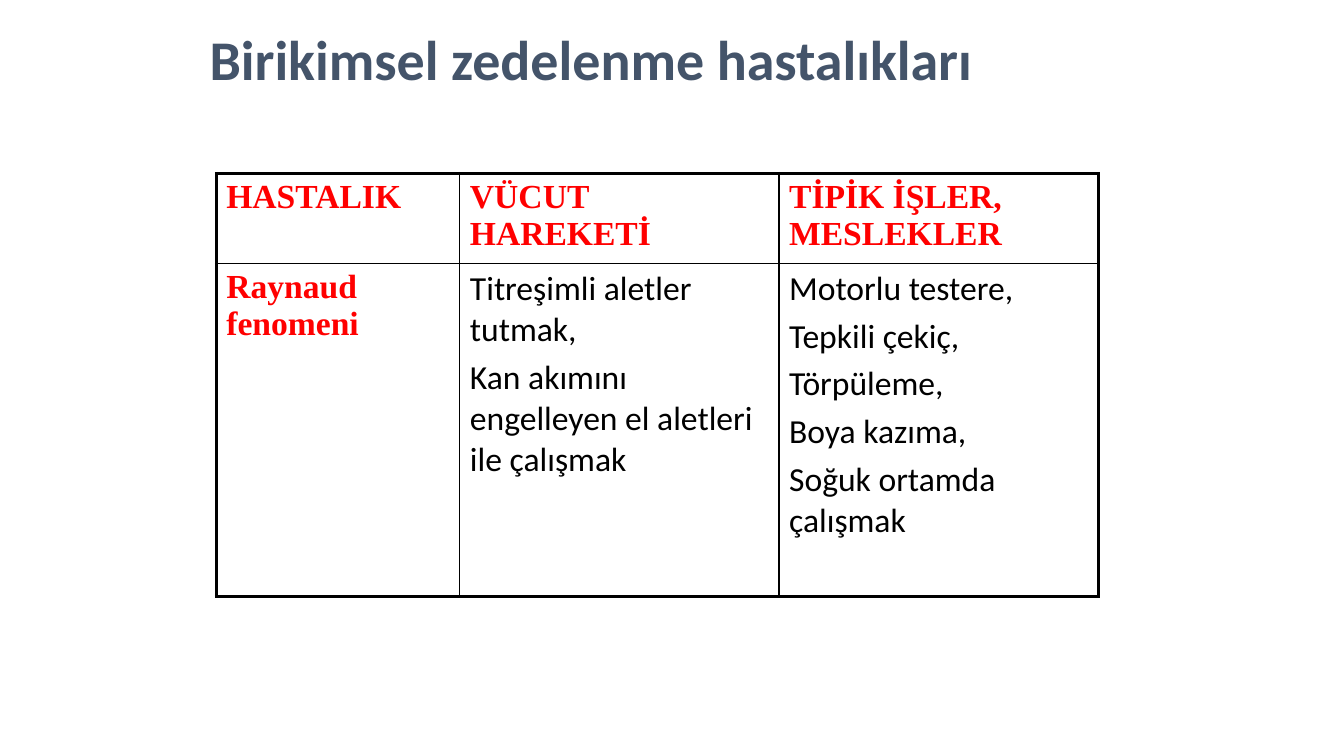
"""Build a slide with a table on a cumulative trauma disorder."""
from lxml.etree import SubElement
from pptx import Presentation
from pptx.dml.color import RGBColor
from pptx.enum.text import MSO_ANCHOR, PP_ALIGN
from pptx.oxml.ns import qn
from pptx.util import Pt

PX = 9525
THIN, THICK = 1, 2.25
BLACK, RED, SLATE = "000000", "FF0000", "44546A"


def write(frame, text, size=24, font="Calibri", color=BLACK, bold=False, line=1.0, gap=4.8):
    frame.word_wrap = True
    for index, content in enumerate(text.split("\n")):
        paragraph = frame.paragraphs[0] if index == 0 else frame.add_paragraph()
        paragraph.alignment = PP_ALIGN.LEFT
        paragraph.line_spacing = line
        paragraph.space_before = Pt(gap if index else 0)
        run = paragraph.add_run()
        run.text = content
        run.font.size = Pt(size)
        run.font.name = font
        run.font.bold = bold
        run.font.color.rgb = RGBColor.from_string(color)


def add_border(cell, side, width):
    border = SubElement(cell._tc.get_or_add_tcPr(), qn(f"a:ln{side}"), w=str(Pt(width)))
    fill = SubElement(border, qn("a:solidFill"))
    SubElement(fill, qn("a:srgbClr"), val=BLACK)


presentation = Presentation()
presentation.slide_width = 1280 * PX
presentation.slide_height = 720 * PX
slide = presentation.slides.add_slide(presentation.slide_layouts[5])

heading = slide.shapes.title
heading.left, heading.top, heading.width, heading.height = (n * PX for n in (190, 22, 893, 75))
heading.text_frame.vertical_anchor = MSO_ANCHOR.MIDDLE
write(heading.text_frame, "Birikimsel zedelenme hastalıkları", size=40, color=SLATE, bold=True, line=0.9)

disease_rows = [
    ["HASTALIK", "VÜCUT HAREKETİ", "TİPİK İŞLER, MESLEKLER"],
    [
        "Raynaud fenomeni",
        "Titreşimli aletler tutmak,\nKan akımını engelleyen el aletleri ile çalışmak",
        "Motorlu testere,\nTepkili çekiç,\nTörpüleme,\nBoya kazıma,\nSoğuk ortamda çalışmak",
    ],
]
column_widths = [232, 304, 304]
row_heights = [86, 317]
last_row, last_column = len(row_heights) - 1, len(column_widths) - 1

diseases = slide.shapes.add_table(
    len(row_heights), len(column_widths),
    206 * PX, 165 * PX, sum(column_widths) * PX, sum(row_heights) * PX,
).table
diseases.first_row = False
diseases.horz_banding = False
for column, width in zip(diseases.columns, column_widths):
    column.width = width * PX
for row, height in zip(diseases.rows, row_heights):
    row.height = height * PX

for r, entries in enumerate(disease_rows):
    for c, entry in enumerate(entries):
        cell = diseases.cell(r, c)
        outer_sides = {"L": c == 0, "R": c == last_column, "T": r == 0, "B": r == last_row}
        for side, is_outer in outer_sides.items():
            add_border(cell, side, THICK if is_outer else THIN)
        cell.fill.background()
        if r == 0 or c == 0:
            write(cell.text_frame, entry, font="Times New Roman", color=RED, bold=True)
        else:
            write(cell.text_frame, entry)

presentation.save("out.pptx")
